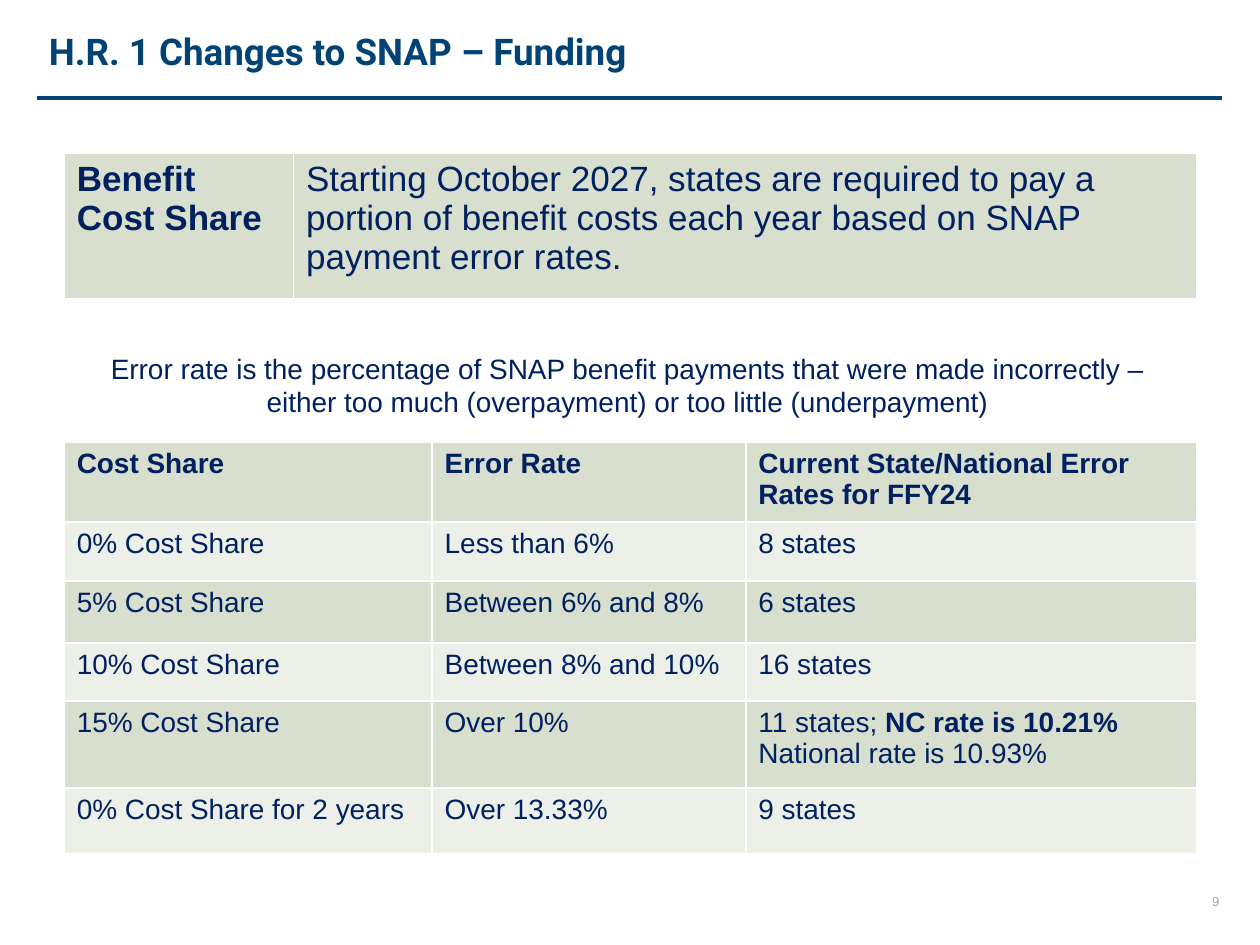
import pptx
import pptx.dml.color
import pptx.enum.shapes
import pptx.enum.text
import pptx.oxml
import pptx.util

RGBColor = pptx.dml.color.RGBColor
Inches = pptx.util.Inches
Pt = pptx.util.Pt
PP_ALIGN = pptx.enum.text.PP_ALIGN
MSO_ANCHOR = pptx.enum.text.MSO_ANCHOR

BLUE = RGBColor(0x01, 0x43, 0x74)
NAVY = RGBColor(0x00, 0x20, 0x60)
GRAY = RGBColor(0xA6, 0xA6, 0xA6)
SAGE = RGBColor(0xD8, 0xDF, 0xCF)
PALE = RGBColor(0xEC, 0xF0, 0xE8)

TITLE = "H.R. 1 Changes to SNAP – Funding"
PAGE = "9"
DEFINITION = [
    "Error rate is the percentage of SNAP benefit payments that were made incorrectly –",
    "either too much (overpayment) or too little (underpayment)",
]

# A cell is a list of paragraphs, each a list of (text, bold) runs.
BENEFIT = [[
    [[("Benefit Cost Share", True)]],
    [[("Starting October 2027, states are required to pay a portion of "
       "benefit costs each year based on SNAP payment error rates.", False)]],
]]
HEADINGS = ["Cost Share", "Error Rate", "Current State/National Error Rates for FFY24"]
TIERS = [
    ("0% Cost Share", "Less than 6%", "8 states"),
    ("5% Cost Share", "Between 6% and 8%", "6 states"),
    ("10% Cost Share", "Between 8% and 10%", "16 states"),
    ("15% Cost Share", "Over 10%",
     [[("11 states; ", False), ("NC rate is 10.21%", True)],
      [("National rate is 10.93%", False)]]),
    ("0% Cost Share for 2 years", "Over 13.33%", "9 states"),
]

TABLE_LEFT = 0.51
BENEFIT_COLS, BENEFIT_ROWS = [1.82, 7.17], [1.15]
TIER_COLS, TIER_ROWS = [2.92, 2.49, 3.58], [0.63, 0.47, 0.49, 0.46, 0.69, 0.52]


def add_run(p, text, size, color, bold=False, font="Arial"):
    r = p.add_run()
    r.text = text
    r.font.name, r.font.size, r.font.bold = font, Pt(size), bold
    r.font.color.rgb = color


def add_box(s, left, top, width, height):
    tf = s.shapes.add_textbox(*map(Inches, (left, top, width, height))).text_frame
    tf.word_wrap = True
    return tf


def fill_paragraphs(tf, paragraphs, size, align=None):
    for i, runs in enumerate(paragraphs):
        p = tf.add_paragraph() if i else tf.paragraphs[0]
        p.alignment = align
        for text, bold in runs:
            add_run(p, text, size, NAVY, bold)


def add_table(s, top, cols, rows, cells, size):
    table = s.shapes.add_table(
        len(rows), len(cols), Inches(TABLE_LEFT), Inches(top),
        Inches(sum(cols)), Inches(sum(rows))).table
    table.first_row = table.horz_banding = False
    for column, width in zip(table.columns, cols):
        column.width = Inches(width)
    for i, (row, height) in enumerate(zip(table.rows, rows)):
        row.height = Inches(height)
        for cell, paragraphs in zip(row.cells, cells[i]):
            cell.fill.solid()
            cell.fill.fore_color.rgb = PALE if i % 2 else SAGE
            fill_paragraphs(cell.text_frame, paragraphs, size)


def main():
    prs = pptx.Presentation()
    prs.slide_width, prs.slide_height = Inches(10), Inches(7.5)
    s = prs.slides.add_slide(prs.slide_layouts[6])

    tf = add_box(s, 9.48, 7.09, 0.34, 0.13)
    tf.margin_left = tf.margin_right = tf.margin_top = tf.margin_bottom = 0
    tf.vertical_anchor = MSO_ANCHOR.MIDDLE
    tf.paragraphs[0].alignment = PP_ALIGN.CENTER
    add_run(tf.paragraphs[0], PAGE, 7.5, GRAY)

    rule = s.shapes.add_connector(
        pptx.enum.shapes.MSO_CONNECTOR.STRAIGHT,
        Inches(0.29), Inches(0.78), Inches(9.7), Inches(0.78))
    rule.line.color.rgb, rule.line.width = BLUE, Pt(2.25)
    rule._element.spPr.append(pptx.oxml.parse_xml(
        '<a:effectLst xmlns:a="http://schemas.openxmlformats.org/drawingml/2006/main"/>'))

    tf = add_box(s, 0.29, 0.25, 10.02, 0.65)
    tf.margin_top = Inches(0.02)
    tf.paragraphs[0].line_spacing = 0.9
    add_run(tf.paragraphs[0], TITLE, 21, BLUE, True, "Roboto")

    add_table(s, 1.22, BENEFIT_COLS, BENEFIT_ROWS, BENEFIT, 20)

    tiers = [[[[(text, True)]] for text in HEADINGS]]
    tiers += [[[[(c, False)]] if isinstance(c, str) else c for c in tier] for tier in TIERS]
    add_table(s, 3.51, TIER_COLS, TIER_ROWS, tiers, 16)

    tf = add_box(s, 0.29, 2.74, 9.38, 0.64)
    fill_paragraphs(tf, [[(line, False)] for line in DEFINITION], 16, PP_ALIGN.CENTER)

    prs.save("out.pptx")


if __name__ == "__main__":
    main()
